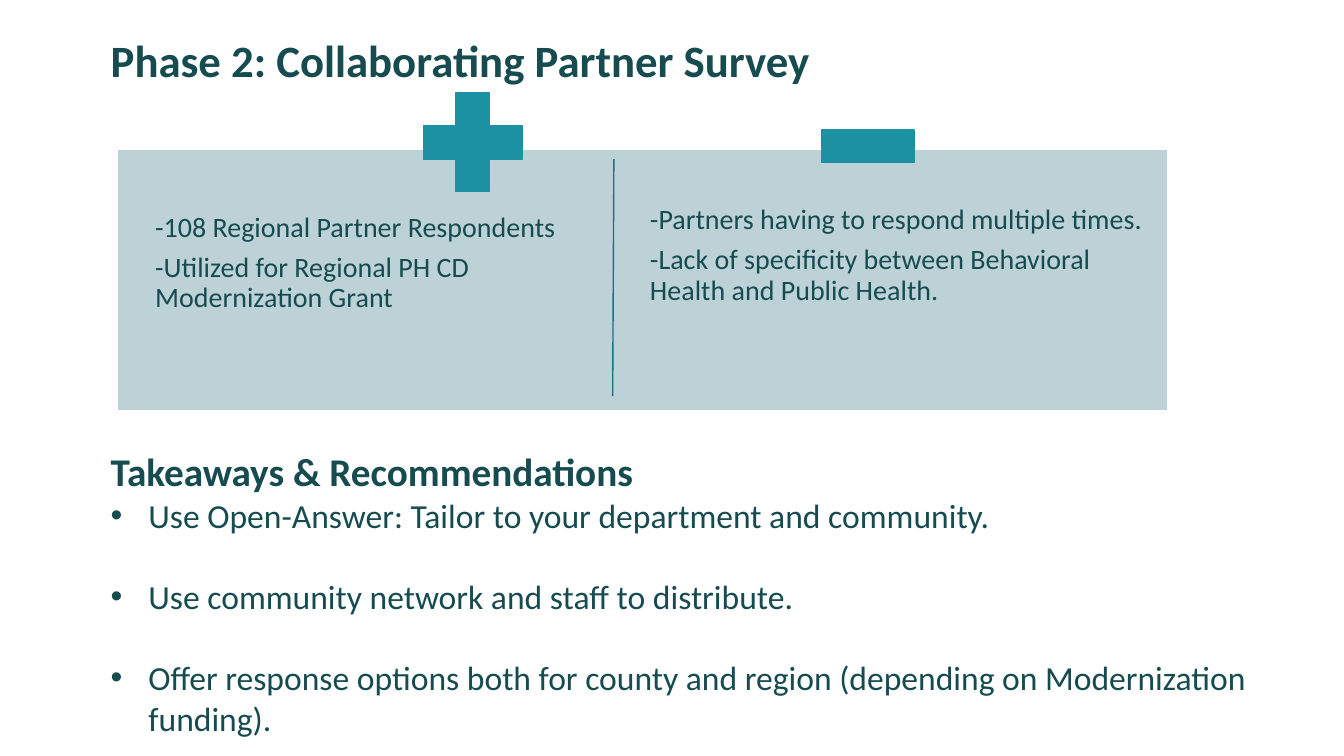
from dataclasses import dataclass
from typing import NamedTuple

from lxml.etree import SubElement
from pptx import Presentation
from pptx.dml.color import RGBColor
from pptx.enum.shapes import MSO_CONNECTOR, MSO_SHAPE
from pptx.enum.text import MSO_ANCHOR
from pptx.oxml.ns import qn
from pptx.util import Cm, Pt


@dataclass(frozen=True)
class Theme:
    font: str = "Calibri"
    ink: RGBColor = RGBColor.from_string("164B4F")
    panel: RGBColor = RGBColor.from_string("BDD2D7")
    white: RGBColor = RGBColor.from_string("FFFFFF")
    sign: RGBColor = RGBColor.from_string("1B91A1")
    divider: RGBColor = RGBColor.from_string("167481")
    title: Pt = Pt(32)
    heading: Pt = Pt(28)
    takeaway: Pt = Pt(24)
    finding: Pt = Pt(20)
    outline: Pt = Pt(1)


THEME = Theme()


class Area(NamedTuple):
    left: float
    top: float
    width: float
    height: float

    def lengths(self) -> list[Cm]:
        return [Cm(value) for value in self]


class Block(NamedTuple):
    kind: MSO_SHAPE
    area: Area
    fill: RGBColor
    line: RGBColor
    adjustments: tuple[float, ...] = ()


class Line(NamedTuple):
    text: str
    size: Pt
    bold: bool = False
    bullet: bool = False
    spacing: dict = {}


class TextArea(NamedTuple):
    area: Area
    lines: list[Line]
    side_margin: float = 0.25
    end_margin: float = 0.13
    anchor: MSO_ANCHOR = MSO_ANCHOR.TOP


FINDING_SPACING = {"line_spacing": 0.9, "space_after": Pt(7)}
TAKEAWAY_GAP = {"space_before": Pt(29.3)}
BULLET_INDENT = Cm(0.95)


def finding(text: str) -> Line:
    return Line(text, THEME.finding, spacing=FINDING_SPACING)


def takeaway(text: str, spacing: dict) -> Line:
    return Line(text, THEME.takeaway, bullet=True, spacing=spacing)


BLOCKS = [
    Block(MSO_SHAPE.RECTANGLE, Area(2.95, 3.76, 26.49, 6.6), THEME.panel, THEME.white),
    Block(MSO_SHAPE.CROSS, Area(10.67, 2.34, 2.49, 2.49), THEME.sign, THEME.sign, (0.328,)),
    Block(MSO_SHAPE.RECTANGLE, Area(20.7, 3.28, 2.34, 0.81), THEME.sign, THEME.sign),
]

TEXT_AREAS = [
    TextArea(
        Area(2.54, 0.1, 24.33, 2.24),
        [Line("Phase 2: Collaborating Partner Survey", THEME.title, bold=True,
              spacing={"line_spacing": 0.9})],
        anchor=MSO_ANCHOR.BOTTOM,
    ),
    TextArea(
        Area(3.81, 5.28, 11.28, 4.5),
        [finding("-108 Regional Partner Respondents"),
         finding("-Utilized for Regional PH CD Modernization Grant")],
        0.1, 0.1,
    ),
    TextArea(
        Area(16.28, 5.08, 12.75, 4.34),
        [finding("-Partners having to respond multiple times."),
         finding("-Lack of specificity between Behavioral Health and Public Health.")],
        0.1, 0.1,
    ),
    TextArea(
        Area(2.54, 9.96, 29.41, 9.02),
        [Line("Takeaways & Recommendations", THEME.heading, bold=True,
              spacing={"line_spacing": 2.0}),
         takeaway("Use Open-Answer: Tailor to your department and community.", {}),
         takeaway("Use community network and staff to distribute.", TAKEAWAY_GAP),
         takeaway("Offer response options both for county and region "
                  "(depending on Modernization funding).", TAKEAWAY_GAP)],
    ),
]


def apply_format(target: object, values: dict) -> None:
    for name, value in values.items():
        setattr(target, name, value)


def draw_block(page, block: Block) -> None:
    shape = page.shapes.add_shape(block.kind, *block.area.lengths())
    shape.shadow.inherit = False
    for index, value in enumerate(block.adjustments):
        shape.adjustments[index] = value
    shape.fill.solid()
    shape.fill.fore_color.rgb = block.fill
    shape.line.color.rgb = block.line
    shape.line.width = THEME.outline


def draw_divider(page) -> None:
    ends = [Cm(value) for value in (15.47, 4.01, 15.44, 9.98)]
    divider = page.shapes.add_connector(MSO_CONNECTOR.STRAIGHT, *ends)
    divider.line.color.rgb = THEME.divider
    divider.line.width = THEME.outline
    SubElement(divider._element.spPr, qn("a:effectLst"))


def add_bullet(para) -> None:
    properties = para._p.get_or_add_pPr()
    properties.set("marL", str(BULLET_INDENT))
    properties.set("indent", str(-BULLET_INDENT))
    SubElement(properties, qn("a:buFont")).set("typeface", "Arial")
    SubElement(properties, qn("a:buChar")).set("char", "•")


def write_line(para, line: Line) -> None:
    if line.bullet:
        add_bullet(para)
    apply_format(para, line.spacing)
    span = para.add_run()
    span.text = line.text
    apply_format(span.font, {"name": THEME.font, "size": line.size, "bold": line.bold})
    span.font.color.rgb = THEME.ink


def draw_text(page, text_area: TextArea) -> None:
    box = page.shapes.add_textbox(*text_area.area.lengths())
    frame = box.text_frame
    side, end = Cm(text_area.side_margin), Cm(text_area.end_margin)
    apply_format(frame, {
        "word_wrap": True,
        "vertical_anchor": text_area.anchor,
        "margin_left": side,
        "margin_right": side,
        "margin_top": end,
        "margin_bottom": end,
    })
    for index, line in enumerate(text_area.lines):
        para = frame.add_paragraph() if index else frame.paragraphs[0]
        write_line(para, line)


def main() -> None:
    deck = Presentation()
    apply_format(deck, {"slide_width": Cm(33.87), "slide_height": Cm(19.05)})
    page = deck.slides.add_slide(deck.slide_layouts[6])
    for block in BLOCKS:
        draw_block(page, block)
    draw_divider(page)
    for text_area in TEXT_AREAS:
        draw_text(page, text_area)
    deck.save("out.pptx")


if __name__ == "__main__":
    main()
